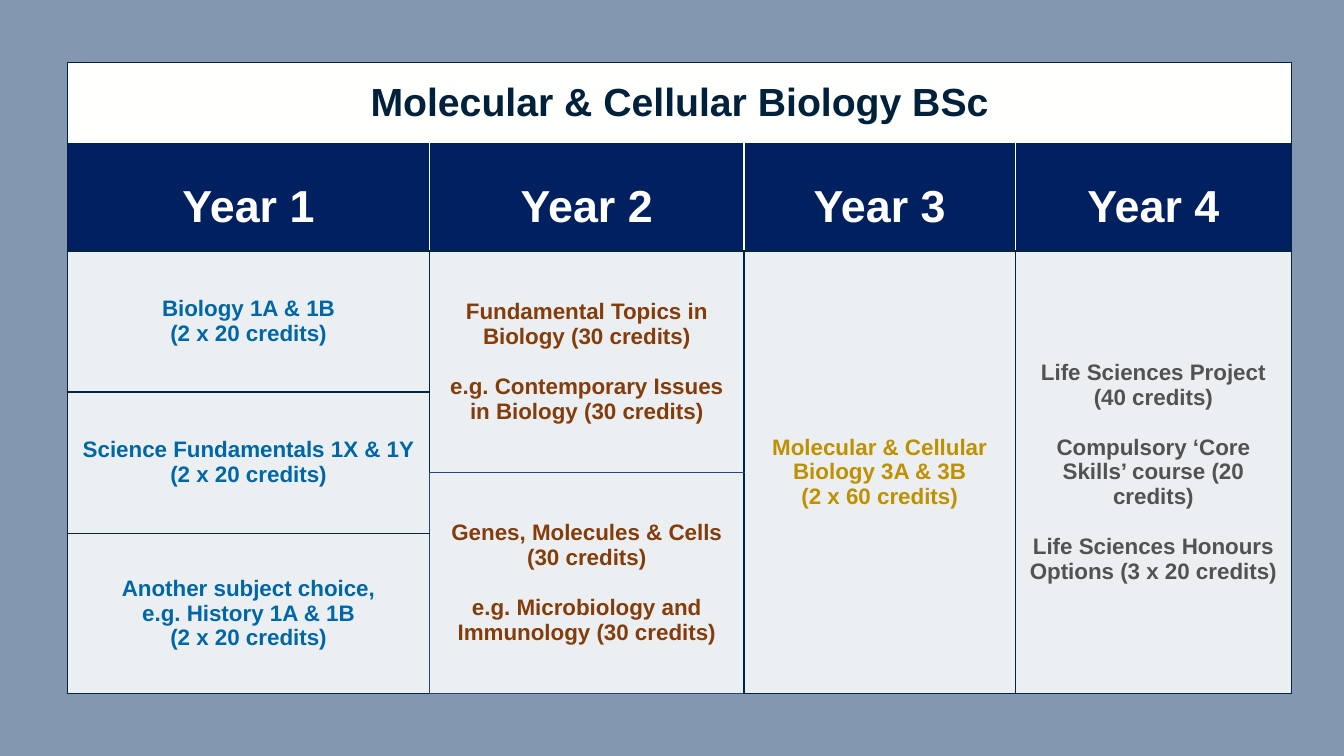
from lxml import etree
from pptx import Presentation
from pptx.dml.color import RGBColor
from pptx.enum.text import MSO_ANCHOR, PP_ALIGN
from pptx.oxml.ns import qn
from pptx.util import Inches, Pt

CENTER, MIDDLE = PP_ALIGN.CENTER, MSO_ANCHOR.MIDDLE
BACKDROP = RGBColor(0x84, 0x97, 0xB0)
WHITE = RGBColor(0xFF, 0xFF, 0xFF)
PAPER = RGBColor(0xFF, 0xFF, 0xFE)
INK = RGBColor(0x00, 0x21, 0x3B)
NAVY = RGBColor(0x00, 0x20, 0x60)
BORDER = RGBColor(0x00, 0x25, 0x42)
BLUE_BORDER = RGBColor(0x1F, 0x49, 0x7D)
BLUE = RGBColor(0x00, 0x67, 0xA7)
BROWN = RGBColor(0x84, 0x3C, 0x0B)
GOLD = RGBColor(0xBF, 0x90, 0x00)
GREY = RGBColor(0x52, 0x52, 0x52)

COLUMNS = [3.59, 3.12, 2.69, 2.74]
ROWS = [0.8, 1.07, 1.4, 0.8, 0.6, 1.59]
TABLE_BOX = (0.67, 0.62, sum(COLUMNS), sum(ROWS))
SIDES = "LRTB"
CREDITS = "(2 x 20 credits)"
TITLE = "Molecular & Cellular Biology BSc"

# row, column, rows spanned, colour, sides with a blue border, groups of lines
COURSES = [
    (2, 0, 1, BLUE, "", [["Biology 1A & 1B", CREDITS]]),
    (3, 0, 2, BLUE, "R", [["Science Fundamentals 1X & 1Y", CREDITS]]),
    (5, 0, 1, BLUE, "R", [["Another subject choice,", "e.g. History 1A & 1B", CREDITS]]),
    (2, 1, 2, BROWN, "B", [["Fundamental Topics in Biology (30 credits)"],
                           ["e.g. Contemporary Issues in Biology (30 credits)"]]),
    (4, 1, 2, BROWN, "LTB", [["Genes, Molecules & Cells (30 credits)"],
                             ["e.g. Microbiology and Immunology (30 credits)"]]),
    (2, 2, 4, GOLD, "", [["Molecular & Cellular Biology 3A & 3B", "(2 x 60 credits)"]]),
    (2, 3, 4, GREY, "", [["Life Sciences Project (40 credits)"],
                         ["Compulsory ‘Core Skills’ course (20 credits)"],
                         ["Life Sciences Honours Options (3 x 20 credits)"]]),
]


def set_format(target, values):
    """Set each named attribute of the target."""
    for name, value in values.items():
        setattr(target, name, value)


def paint_cell(cell, color, opacity, edges):
    """Fill a cell and draw its four borders, dark unless edges says otherwise."""
    cell.fill.solid()
    cell.fill.fore_color.rgb = color
    properties = cell._tc.get_or_add_tcPr()
    if opacity < 100:
        tint = properties.find(qn("a:solidFill")).find(qn("a:srgbClr"))
        etree.SubElement(tint, qn("a:alpha"), val=str(opacity * 1000))
    for index, side in enumerate(SIDES):
        line = etree.Element(qn(f"a:ln{side}"), w=str(Pt(1)))
        fill = etree.SubElement(line, qn("a:solidFill"))
        etree.SubElement(fill, qn("a:srgbClr"), val=str(edges.get(side, BORDER)))
        properties.insert(index, line)


def write_cell(cell, groups, size, color, line_spacing=None):
    """Write centred bold lines, with one line of space between groups."""
    set_format(cell, {
        "vertical_anchor": MIDDLE,
        "margin_left": Inches(0.12), "margin_right": Inches(0.12),
        "margin_top": Inches(0.06), "margin_bottom": Inches(0.06),
    })
    lines = [(text, number > 0 and position == 0)
             for number, group in enumerate(groups)
             for position, text in enumerate(group)]
    frame = cell.text_frame
    for index, (text, opens_group) in enumerate(lines):
        para = frame.add_paragraph() if index else frame.paragraphs[0]
        set_format(para, {"alignment": CENTER, "line_spacing": line_spacing})
        if opens_group:
            para.space_before = Pt(size * 1.12)
        span = para.add_run()
        span.text = text
        set_format(span.font, {"name": "Arial", "size": Pt(size), "bold": True})
        span.font.color.rgb = color


def fill_block(table, row, column, height, width, color, opacity=100, edges=None):
    """Paint a block of cells, merge it and return its first cell."""
    for r in range(row, row + height):
        for c in range(column, column + width):
            paint_cell(table.cell(r, c), color, opacity, edges or {})
    first = table.cell(row, column)
    if height * width > 1:
        first.merge(table.cell(row + height - 1, column + width - 1))
    return first


def add_headings(table):
    """Write the title row and the row of years."""
    last = len(COLUMNS) - 1
    title = fill_block(table, 0, 0, 1, len(COLUMNS), PAPER)
    write_cell(title, [[TITLE]], 28, INK)
    for column in range(len(COLUMNS)):
        edges = {"L": PAPER if column > 0 else BORDER,
                 "R": PAPER if column < last else BORDER}
        year = fill_block(table, 1, column, 1, 1, NAVY, edges=edges)
        write_cell(year, [[f"Year {column + 1}"]], 32, WHITE, 1.4)


def add_courses(table):
    """Write the courses below each year."""
    for row, column, height, color, blue_sides, groups in COURSES:
        edges = dict.fromkeys(blue_sides, BLUE_BORDER)
        cell = fill_block(table, row, column, height, 1, PAPER, 85, edges)
        write_cell(cell, groups, 16, color)


def add_programme(page, box):
    """Place the degree table in a box, sharing it out by columns and rows."""
    left, top, width, height = (Inches(length) for length in box)
    table = page.shapes.add_table(
        len(ROWS), len(COLUMNS), left, top, width, height).table
    set_format(table, {"first_row": False, "horz_banding": False})
    for column, share in zip(table.columns, COLUMNS):
        column.width = int(width * share / sum(COLUMNS))
    for row, share in zip(table.rows, ROWS):
        row.height = int(height * share / sum(ROWS))
    add_headings(table)
    add_courses(table)


def main():
    """Build the slide and save it."""
    deck = Presentation()
    set_format(deck, {"slide_width": Inches(13.33), "slide_height": Inches(7.5)})
    page = deck.slides.add_slide(deck.slide_layouts[6])
    page.background.fill.solid()
    page.background.fill.fore_color.rgb = BACKDROP
    add_programme(page, TABLE_BOX)
    deck.save("out.pptx")


if __name__ == "__main__":
    main()
